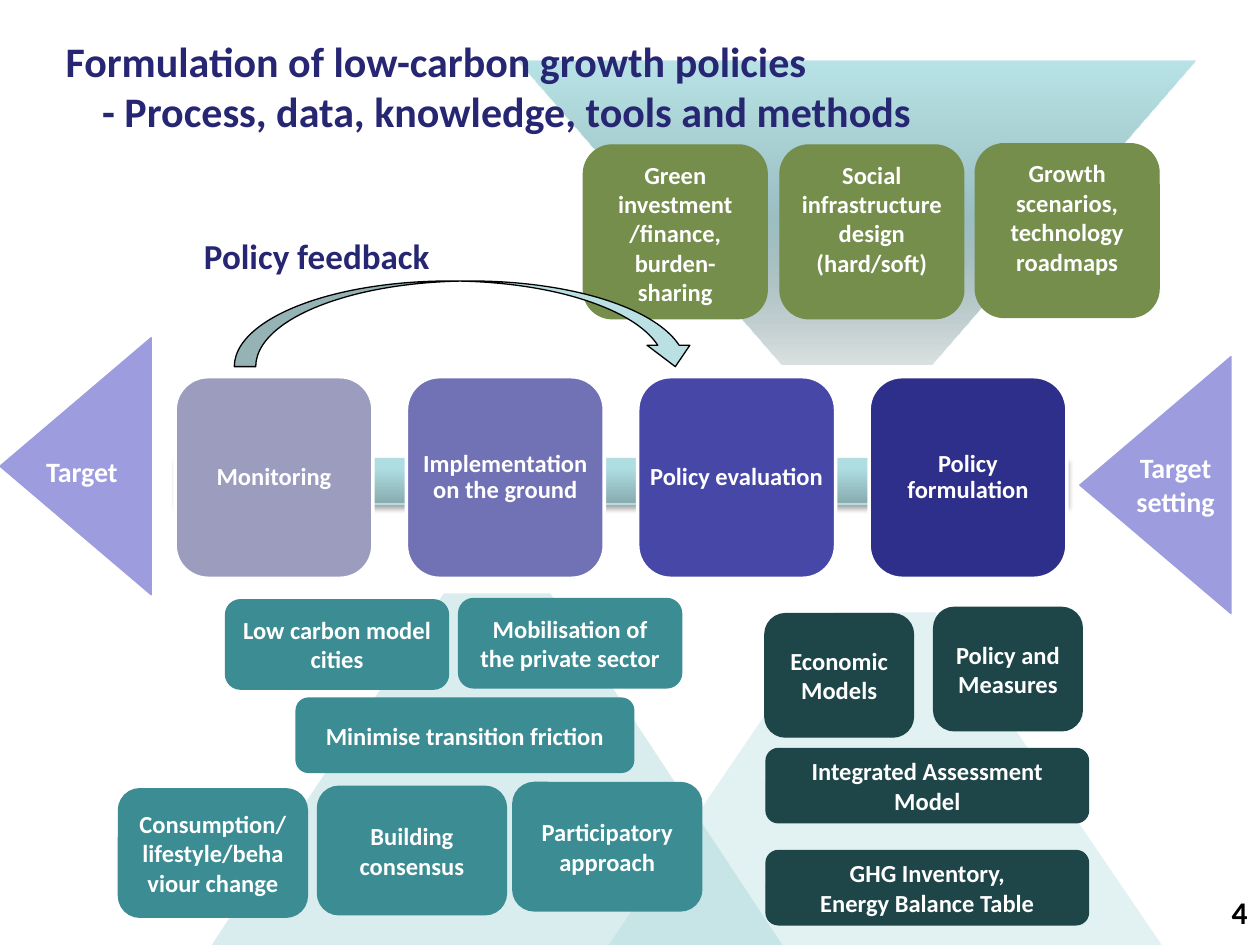
import pptx
import pptx.dml.color
import pptx.enum.shapes
import pptx.enum.text
import pptx.oxml
import pptx.oxml.ns
import pptx.util
from pptx.util import Inches

RGBColor = pptx.dml.color.RGBColor
SHAPE = pptx.enum.shapes.MSO_SHAPE
ALIGN = pptx.enum.text.PP_ALIGN
ANCHOR = pptx.enum.text.MSO_ANCHOR

WHITE = RGBColor(0xFF, 0xFF, 0xFF)
BLACK = RGBColor(0x00, 0x00, 0x00)
NAVY = RGBColor(0x26, 0x26, 0x73)
OLIVE = RGBColor(0x75, 0x8E, 0x4C)
TEAL = RGBColor(0x3C, 0x8C, 0x93)
DARK_TEAL = RGBColor(0x1E, 0x46, 0x49)
LAVENDER = RGBColor(0x9C, 0x9C, 0xDF)
PALE_BLUE = RGBColor(0xBB, 0xE0, 0xE3)
BAR_LINE = RGBColor(0xB6, 0xDC, 0xDF)
MODELS_FAN = RGBColor(0xBA, 0xDD, 0xE1)
ACTIONS_FAN = RGBColor(0x9E, 0xD3, 0xD7)
STEP_COLORS = [
    RGBColor(0x9C, 0x9C, 0xBF),
    RGBColor(0x71, 0x71, 0xB5),
    RGBColor(0x47, 0x47, 0xA8),
    RGBColor(0x2E, 0x2E, 0x8B),
]
DRAWING = 'xmlns:a="http://schemas.openxmlformats.org/drawingml/2006/main"'

presentation = pptx.Presentation()
presentation.slide_width = Inches(10)
presentation.slide_height = Inches(7.5)
slide = presentation.slides.add_slide(presentation.slide_layouts[5])


def write_text(shape, text, size=14, color=WHITE, align=ALIGN.CENTER,
               anchor=ANCHOR.MIDDLE, spacing=1.0):
    frame = shape.text_frame
    frame.word_wrap = True
    frame.auto_size = pptx.enum.text.MSO_AUTO_SIZE.NONE
    frame.vertical_anchor = anchor
    frame.text = text
    for paragraph in frame.paragraphs:
        paragraph.alignment = align
        paragraph.line_spacing = spacing
        for run in paragraph.runs:
            run.font.name = "Calibri"
            run.font.size = pptx.util.Pt(size)
            run.font.bold = True
            run.font.color.rgb = color


def add_shape(kind, box, fill, line=None, line_width=0.75):
    shape = slide.shapes.add_shape(kind, *[Inches(length) for length in box])
    shape.shadow.inherit = False
    shape.fill.solid()
    shape.fill.fore_color.rgb = fill
    if line is None:
        shape.line.fill.background()
    else:
        shape.line.color.rgb = line
        shape.line.width = pptx.util.Pt(line_width)
    return shape


for box, color, slope, opacity in [
    ((4.83, 4.86, 4.39, 2.64), MODELS_FAN, 0.68, 41),
    ((1.68, 4.71, 4.53, 2.79), ACTIONS_FAN, 0.66, 39),
]:
    fan = add_shape(SHAPE.TRAPEZOID, box, color)
    fan.adjustments[0] = slope
    color_element = fan.element.spPr.find(".//" + pptx.oxml.ns.qn("a:srgbClr"))
    color_element.append(pptx.oxml.parse_xml(f'<a:alpha {DRAWING} val="{opacity * 1000}"/>'))

funnel = add_shape(SHAPE.TRAPEZOID, (4.11, 0.48, 5.38, 2.41), PALE_BLUE)
funnel.adjustments[0] = 0.87
funnel.rotation = 180
process_bar = add_shape(SHAPE.RECTANGLE, (1.39, 3.64, 7.08, 0.36), PALE_BLUE, BAR_LINE)

for shape, angle, stops in [
    (funnel, 90, [(0, "6D8688", 24), (50, "9BBFC2", 100), (100, "B8E3E6", 100)]),
    (process_bar, 270, [(0, "87ABAE", 100), (80, "AFDEE2", 100), (100, "AFE0E4", 100)]),
]:
    stop_list = "".join(
        f'<a:gs pos="{position * 1000}"><a:srgbClr val="{color}">'
        f'<a:alpha val="{opacity * 1000}"/></a:srgbClr></a:gs>'
        for position, color, opacity in stops
    )
    gradient = pptx.oxml.parse_xml(
        f'<a:gradFill {DRAWING} rotWithShape="1"><a:gsLst>{stop_list}</a:gsLst>'
        f'<a:lin ang="{angle * 60000}" scaled="0"/></a:gradFill>'
    )
    properties = shape.element.spPr
    properties.replace(properties.find(pptx.oxml.ns.qn("a:solidFill")), gradient)

bar_effects = process_bar.element.spPr.find(pptx.oxml.ns.qn("a:effectLst"))
bar_effects.append(pptx.oxml.parse_xml(
    f'<a:outerShdw {DRAWING} blurRad="39400" dist="22900" dir="5400000" rotWithShape="0">'
    '<a:srgbClr val="000000"><a:alpha val="35000"/></a:srgbClr></a:outerShdw>'
))

steps = ["Monitoring", "Implementation on the ground", "Policy evaluation", "Policy formulation"]
for index, (step, color) in enumerate(zip(steps, STEP_COLORS)):
    box = (1.39 + index * 1.836, 2.99, 1.57, 1.6)
    shape = add_shape(SHAPE.ROUNDED_RECTANGLE, box, color, WHITE, 2)
    write_text(shape, step, spacing=0.9)
    shape.text_frame.margin_left = shape.text_frame.margin_right = 0

for text, box, color, anchor in [
    ("Green investment\n/finance, burden- sharing", (4.63, 1.15, 1.46, 1.38), OLIVE, ANCHOR.TOP),
    ("Social infrastructure design\n(hard/soft)", (6.19, 1.15, 1.46, 1.38), OLIVE, ANCHOR.TOP),
    ("Growth scenarios,\ntechnology roadmaps", (7.74, 1.14, 1.46, 1.38), OLIVE, ANCHOR.TOP),
    ("Low carbon model cities", (1.79, 4.76, 1.77, 0.71), TEAL, ANCHOR.MIDDLE),
    ("Mobilisation of the private sector", (3.64, 4.75, 1.77, 0.71), TEAL, ANCHOR.MIDDLE),
    ("Minimise transition friction", (2.35, 5.54, 2.68, 0.59), TEAL, ANCHOR.MIDDLE),
    ("Consumption/ lifestyle/behaviour change", (0.94, 6.26, 1.5, 1.02), TEAL, ANCHOR.MIDDLE),
    ("Building consensus", (2.52, 6.24, 1.5, 1.02), TEAL, ANCHOR.MIDDLE),
    ("Participatory approach", (4.07, 6.21, 1.5, 1.02), TEAL, ANCHOR.MIDDLE),
    ("Economic Models", (6.07, 4.87, 1.18, 0.98), DARK_TEAL, ANCHOR.MIDDLE),
    ("Policy and Measures", (7.41, 4.82, 1.18, 0.98), DARK_TEAL, ANCHOR.MIDDLE),
    ("Integrated Assessment Model", (6.08, 5.94, 2.56, 0.59), DARK_TEAL, ANCHOR.MIDDLE),
    ("GHG Inventory,\nEnergy Balance Table", (6.08, 6.75, 2.56, 0.59), DARK_TEAL, ANCHOR.MIDDLE),
]:
    shape = add_shape(SHAPE.ROUNDED_RECTANGLE, box, color, color)
    write_text(shape, text, anchor=anchor)

for left, top in [(8.15, 3.25), (-0.42, 3.1)]:
    target = add_shape(SHAPE.ISOSCELES_TRIANGLE, (left, top, 2.04, 1.2), LAVENDER, LAVENDER)
    target.rotation = 270

add_shape(SHAPE.CURVED_DOWN_ARROW, (1.86, 2.23, 3.67, 0.68), PALE_BLUE, BLACK)

for text, box, size, color, align, anchor in [
    ("Target setting", (8.71, 3.53, 1.24, 0.95), 16, WHITE, ALIGN.CENTER, ANCHOR.TOP),
    ("Target", (0, 3.56, 1.3, 0.64), 16, WHITE, ALIGN.CENTER, ANCHOR.TOP),
    ("Policy feedback", (1.52, 1.81, 2.19, 0.43), 20, NAVY, ALIGN.LEFT, ANCHOR.TOP),
    ("4", (7.67, 6.98, 2.33, 0.52), 18, BLACK, ALIGN.RIGHT, ANCHOR.MIDDLE),
]:
    label = slide.shapes.add_textbox(*[Inches(length) for length in box])
    write_text(label, text, size=size, color=color, align=align, anchor=anchor)

title = slide.shapes.title
title.left, title.top = Inches(0.34), Inches(0.23)
title.width, title.height = Inches(7.72), Inches(1.06)
write_text(title, "Formulation of low-carbon growth policies\n- Process, data, knowledge, tools and methods",
           size=24, color=NAVY, align=ALIGN.LEFT, anchor=ANCHOR.TOP)
for paragraph, indent in zip(title.text_frame.paragraphs, [0.08, 0.37]):
    paragraph.font.size = pptx.util.Pt(24)
    paragraph_properties = paragraph.runs[0].font and paragraph.alignment is not None
    paragraph_element = title.element.txBody.findall(pptx.oxml.ns.qn("a:p"))[0 if indent < 0.1 else 1]
    paragraph_element.find(pptx.oxml.ns.qn("a:pPr")).set("marL", str(Inches(indent)))
slide.shapes.element.append(title.element)

presentation.save("out.pptx")
